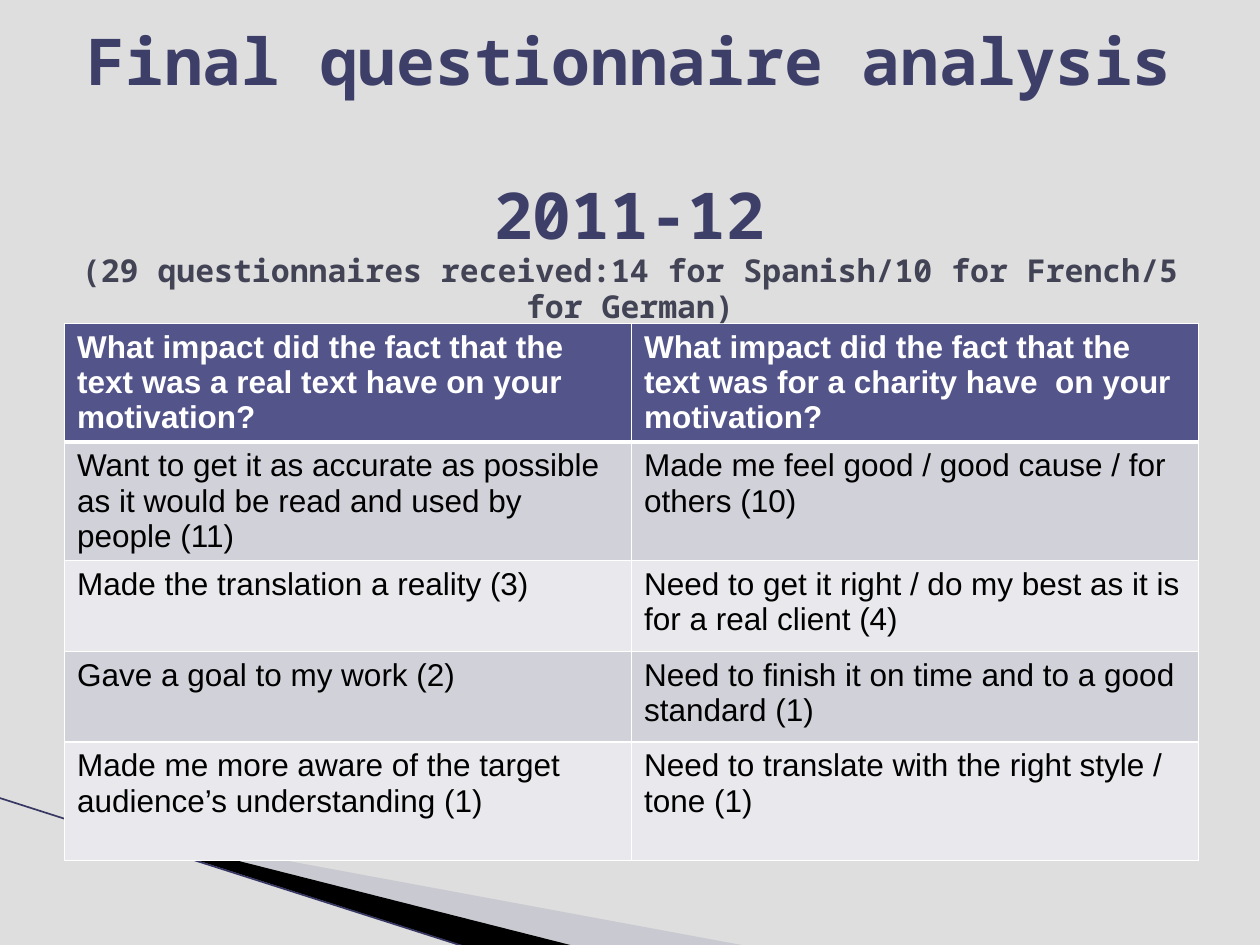
"""Build the questionnaire analysis slide with its title and results table."""
import pptx
import pptx.dml.color
import pptx.enum.shapes
import pptx.enum.text
import pptx.oxml
import pptx.oxml.ns
import pptx.util
from pptx.dml.color import RGBColor
from pptx.util import Cm, Pt

BACKGROUND = RGBColor(0xDE, 0xDE, 0xDE)
TITLE = RGBColor(0x3E, 0x3F, 0x68)
SUBTITLE = RGBColor(0x42, 0x44, 0x56)
HEADER = RGBColor(0x53, 0x54, 0x8A)
BANDS = (RGBColor(0xD1, 0xD1, 0xDA), RGBColor(0xE9, 0xE9, 0xED))
WEDGE = RGBColor(0xAA, 0xAA, 0xBF)
EDGE = RGBColor(0x37, 0x37, 0x63)
BLACK = RGBColor(0, 0, 0)
WHITE = RGBColor(0xFF, 0xFF, 0xFF)

HEADINGS = [
    ("Final questionnaire analysis", 36.9, TITLE, 44, 0),
    ("2011-12", 36.9, TITLE, 44, 44),
    ("(29 questionnaires received:14 for Spanish/10 for French/5 for German)", 18, SUBTITLE, 20.5, 0),
]
ROWS = [
    ("What impact did the fact that the text was a real text have on your motivation?",
     "What impact did the fact that the text was for a charity have  on your motivation?"),
    ("Want to get it as accurate as possible as it would be read and used by people (11)",
     "Made me feel good / good cause / for others (10)"),
    ("Made the translation a reality (3)",
     "Need to get it right / do my best as it is for a real client (4)"),
    ("Gave a goal to my work (2)",
     "Need to finish it on time and to a good standard (1)"),
    ("Made me more aware of the target audience’s understanding (1)",
     "Need to translate with the right style / tone (1)"),
]
ROW_HEIGHTS = (2.39, 2.39, 1.83, 1.83, 2.39)
WEDGES = [
    ([(1.4, 16.54), (15.11, 19.08), (11.58, 19.08), (1.4, 16.51)], WEDGE, 40),
    ([(1.35, 16.48), (11.61, 19.08), (9.45, 19.1), (1.37, 16.51)], BLACK, 100),
]


def add_wedge(page, points, color, opacity):
    corners = [(Cm(x), Cm(y)) for x, y in points]
    builder = page.shapes.build_freeform(*corners[0])
    builder.add_line_segments(corners[1:], close=True)
    wedge = builder.convert_to_shape()
    wedge.shadow.inherit = False
    wedge.fill.solid()
    wedge.fill.fore_color.rgb = color
    wedge.line.fill.background()
    if opacity < 100:
        tint = wedge.fill._xPr.find(".//" + pptx.oxml.ns.qn("a:srgbClr"))
        tint.append(pptx.oxml.parse_xml(
            f'<a:alpha {pptx.oxml.ns.nsdecls("a")} val="{opacity * 1000}"/>'))


def add_edge(page):
    edge = page.shapes.add_connector(
        pptx.enum.shapes.MSO_CONNECTOR.STRAIGHT, Cm(-0.03), Cm(16.08), Cm(9.42), Cm(19.1))
    edge.line.color.rgb = EDGE
    edge.line.width = Pt(0.95)
    edge._element.spPr.append(pptx.oxml.parse_xml(
        f'<a:effectLst {pptx.oxml.ns.nsdecls("a")}/>'))


def add_span(para, text, font, size, color, bold):
    span = para.add_run()
    span.text = text
    span.font.name = font
    span.font.size = Pt(size)
    span.font.color.rgb = color
    span.font.bold = bold


def set_borders(cell, widths):
    properties = cell._tc.get_or_add_tcPr()
    for place, (side, width) in enumerate(widths.items()):
        properties.insert(place, pptx.oxml.parse_xml(
            f'<a:ln{side} {pptx.oxml.ns.nsdecls("a")} w="{Pt(width)}">'
            f'<a:solidFill><a:srgbClr val="{WHITE}"/></a:solidFill></a:ln{side}>'))


def add_results(page):
    table = page.shapes.add_table(
        len(ROWS), 2, Cm(1.3), Cm(6.52), Cm(22.86), Cm(sum(ROW_HEIGHTS))).table
    for row, (texts, height) in enumerate(zip(ROWS, ROW_HEIGHTS)):
        table.rows[row].height = Cm(height)
        heading = row == 0
        for column, text in enumerate(texts):
            cell = table.cell(row, column)
            cell.fill.solid()
            cell.fill.fore_color.rgb = HEADER if heading else BANDS[(row - 1) % 2]
            set_borders(cell, {"L": 1, "R": 1, "T": 3 if row == 1 else 1, "B": 3 if heading else 1})
            add_span(cell.text_frame.paragraphs[0], text, "Arial", 18,
                     WHITE if heading else BLACK, heading)


def add_title(page):
    box = page.shapes.add_textbox(Cm(1.27), Cm(0.44), Cm(22.86), Cm(6.05))
    frame = box.text_frame
    frame.word_wrap = True
    frame.vertical_anchor = pptx.enum.text.MSO_ANCHOR.TOP
    frame.margin_top = frame.margin_bottom = 0
    for index, (text, size, color, pitch, before) in enumerate(HEADINGS):
        para = frame.add_paragraph() if index else frame.paragraphs[0]
        para.alignment = pptx.enum.text.PP_ALIGN.CENTER
        para.line_spacing = Pt(pitch)
        if before:
            para.space_before = Pt(before)
        add_span(para, text, "Noto Sans Mono", size, color, True)


def main():
    deck = pptx.Presentation()
    deck.slide_width, deck.slide_height = Cm(25.4), Cm(19.05)
    page = deck.slides.add_slide(deck.slide_layouts[6])
    page.background.fill.solid()
    page.background.fill.fore_color.rgb = BACKGROUND
    for points, color, opacity in WEDGES:
        add_wedge(page, points, color, opacity)
    add_edge(page)
    add_results(page)
    add_title(page)
    deck.save("out.pptx")


if __name__ == "__main__":
    main()
